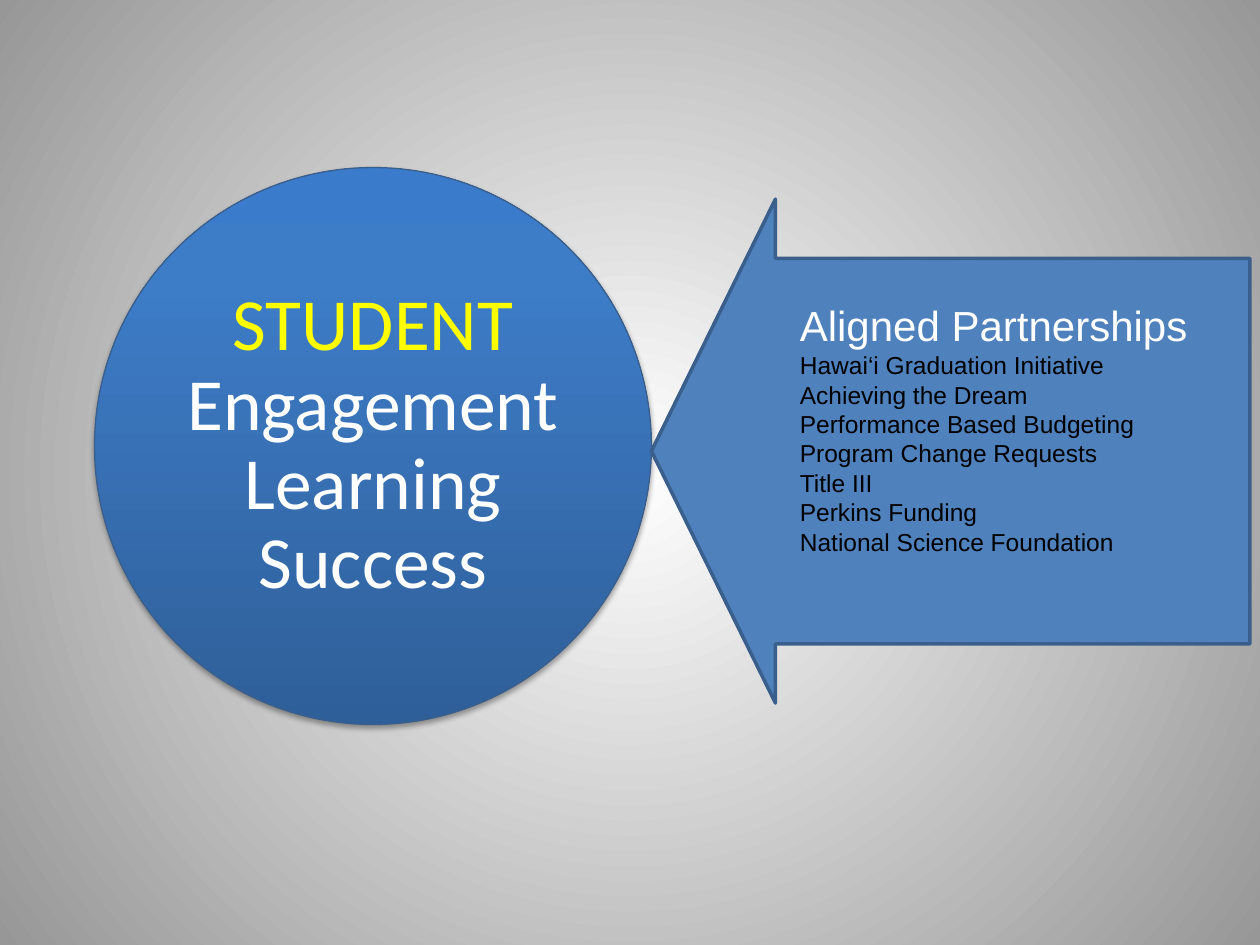
from lxml.etree import SubElement
from pptx import Presentation
from pptx.dml.color import RGBColor
from pptx.enum.shapes import MSO_SHAPE
from pptx.enum.text import MSO_ANCHOR, PP_ALIGN
from pptx.oxml.ns import qn
from pptx.util import Inches, Pt

CIRCLE_LINES = ["STUDENT", "Engagement", "Learning", "Success"]
PARTNERSHIPS = [
    "Hawai‘i Graduation Initiative",
    "Achieving the Dream",
    "Performance Based Budgeting",
    "Program Change Requests",
    "Title III",
    "Perkins Funding",
    "National Science Foundation",
]


def color(value):
    return RGBColor.from_string(value)


def add_child(parent, tag, **attributes):
    return SubElement(parent, qn(tag), {key: str(value) for key, value in attributes.items()})


def set_gradient(fill, owner, stops, angle=None):
    """Linear gradient at an angle, or a circular one from the centre."""
    fill.gradient()
    gradient = owner.find(".//" + qn("a:gradFill"))
    for child in list(gradient):
        gradient.remove(child)
    stop_list = add_child(gradient, "a:gsLst")
    for position, value in stops:
        stop = add_child(stop_list, "a:gs", pos=position * 1000)
        add_child(stop, "a:srgbClr", val=value)
    if angle is None:
        circle = add_child(gradient, "a:path", path="circle")
        add_child(circle, "a:fillToRect", l=50000, t=50000, r=50000, b=50000)
    else:
        add_child(gradient, "a:lin", ang=angle * 60000, scaled=0)


def add_shadow(shape):
    effects = shape._element.spPr.find(qn("a:effectLst"))
    shadow = add_child(effects, "a:outerShdw", blurRad=Pt(3.1), dist=Pt(1.8),
                       dir=90 * 60000, rotWithShape=0)
    black = add_child(shadow, "a:srgbClr", val="000000")
    add_child(black, "a:alpha", val=35000)


def add_outlined_shape(slide, kind, box, line_width):
    shape = slide.shapes.add_shape(kind, *map(Inches, box))
    shape.shadow.inherit = False
    shape.line.color.rgb = color("3A5F8C")
    shape.line.width = Pt(line_width)
    return shape


def add_run(paragraph, text, name, size, value):
    run = paragraph.add_run()
    run.text = text
    for key, setting in {"name": name, "size": Pt(size)}.items():
        setattr(run.font, key, setting)
    run.font.color.rgb = color(value)


def add_student_circle(slide):
    circle = add_outlined_shape(slide, MSO_SHAPE.OVAL, (0.75, 1.33, 4.42, 4.42), 0.75)
    set_gradient(circle.fill, circle._element.spPr,
                 [(0, "2F5F99"), (80, "3D7CC7"), (100, "3A7CCB")], angle=270)
    add_shadow(circle)

    frame = circle.text_frame
    frame.word_wrap = True
    frame.vertical_anchor = MSO_ANCHOR.MIDDLE
    for side in ("left", "top", "right", "bottom"):
        setattr(frame, f"margin_{side}", Inches(0.06))
    paragraph = frame.paragraphs[0]
    paragraph.alignment = PP_ALIGN.CENTER
    paragraph.line_spacing = 0.9
    for index, line in enumerate(CIRCLE_LINES):
        if index:
            paragraph.add_line_break()
        add_run(paragraph, line, "Calibri", 42, "FFFFFF" if index else "FFFF00")


def add_partnership_arrow(slide):
    arrow = add_outlined_shape(slide, MSO_SHAPE.RIGHT_ARROW, (5.17, 1.58, 4.75, 4), 2)
    arrow.rotation = 180
    arrow.adjustments[0] = 0.765
    arrow.adjustments[1] = 0.246
    arrow.fill.solid()
    arrow.fill.fore_color.rgb = color("4F81BD")


def add_partnership_list(slide):
    box = slide.shapes.add_textbox(*map(Inches, (6.25, 2.33, 3.33, 2.93)))
    frame = box.text_frame
    frame.word_wrap = True
    add_run(frame.paragraphs[0], "Aligned Partnerships", "Arial", 24, "FFFFFF")
    for partnership in PARTNERSHIPS:
        add_run(frame.add_paragraph(), partnership, "Arial", 14, "000000")


def main():
    presentation = Presentation()
    presentation.slide_width = Inches(10)
    presentation.slide_height = Inches(7.5)
    slide = presentation.slides.add_slide(presentation.slide_layouts[6])

    # Background
    set_gradient(slide.background.fill, slide._element, [(0, "FFFFFF"), (100, "979797")])

    # Student goals and the partnerships that point at them
    add_student_circle(slide)
    add_partnership_arrow(slide)
    add_partnership_list(slide)
    presentation.save("out.pptx")


if __name__ == "__main__":
    main()
